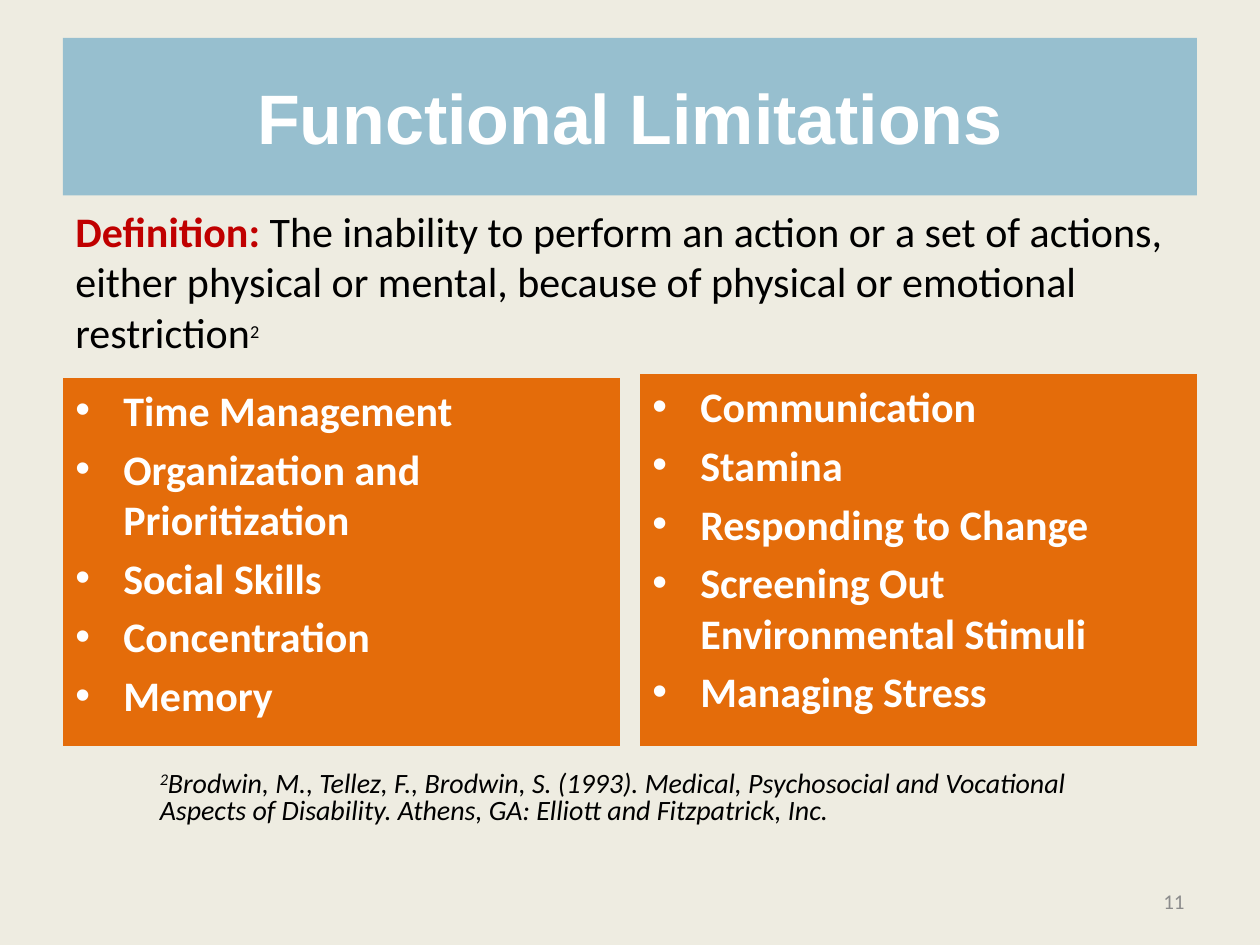
from lxml import etree
from pptx import Presentation
from pptx.dml.color import RGBColor
from pptx.enum.shapes import MSO_SHAPE
from pptx.enum.text import MSO_ANCHOR, PP_ALIGN
from pptx.oxml.ns import qn
from pptx.util import Inches, Pt

RECTANGLE = MSO_SHAPE.RECTANGLE
TOP, MIDDLE = MSO_ANCHOR.TOP, MSO_ANCHOR.MIDDLE
LEFT, CENTER, RIGHT = PP_ALIGN.LEFT, PP_ALIGN.CENTER, PP_ALIGN.RIGHT

COLORS = {
    "background": "EEECE1",
    "banner": "97BFCF",
    "panel": "E46C0A",
    "term": "C00000",
    "body": "000000",
    "light": "FFFFFF",
    "number": "8C8C8C",
}

MARGIN = 0.5
PANEL_WIDTH = 4.42
PANEL_BOTTOM = 5.92
BULLET_INDENT = 0.38
ITEM_SPACING = Pt(4.8)

LIMITATIONS = [
    (MARGIN, 3, ["Time Management", "Organization and Prioritization",
                 "Social Skills", "Concentration", "Memory"]),
    (10 - MARGIN - PANEL_WIDTH, 2.97,
     ["Communication", "Stamina", "Responding to Change",
      "Screening Out Environmental Stimuli", "Managing Stress"]),
]


def rgb(name):
    return RGBColor.from_string(COLORS[name])


def add_run(paragraph, text, color, superscript=False, **font_format):
    run = paragraph.add_run()
    run.text = text
    for attribute, value in {"name": "Calibri", **font_format}.items():
        setattr(run.font, attribute, value)
    run.font.color.rgb = rgb(color)
    if superscript:
        run.font._element.set("baseline", "30000")


def prepare_frame(shape, anchor):
    frame = shape.text_frame
    frame.word_wrap = True
    frame.vertical_anchor = anchor
    return frame


def add_block(slide, left, top, width, height, fill, anchor=TOP):
    """Add a filled rectangle and return its text frame."""
    block = slide.shapes.add_shape(
        RECTANGLE, Inches(left), Inches(top), Inches(width), Inches(height))
    block.shadow.inherit = False
    block.fill.solid()
    block.fill.fore_color.rgb = rgb(fill)
    block.line.fill.background()
    return prepare_frame(block, anchor)


def add_text(slide, left, top, width, height, anchor=TOP):
    """Add a text box and return its text frame."""
    box = slide.shapes.add_textbox(
        Inches(left), Inches(top), Inches(width), Inches(height))
    return prepare_frame(box, anchor)


def add_bullet(paragraph):
    properties = paragraph._p.get_or_add_pPr()
    properties.set("marL", str(Inches(BULLET_INDENT)))
    properties.set("indent", str(-Inches(BULLET_INDENT)))
    bullet_color = etree.SubElement(properties, qn("a:buClr"))
    etree.SubElement(bullet_color, qn("a:srgbClr"), val=COLORS["light"])
    etree.SubElement(properties, qn("a:buFont"), typeface="Arial")
    etree.SubElement(properties, qn("a:buChar"), char="•")


def add_limitations(slide, left, top, items):
    frame = add_block(slide, left, top, PANEL_WIDTH, PANEL_BOTTOM - top, "panel")
    for index, item in enumerate(items):
        paragraph = frame.add_paragraph() if index else frame.paragraphs[0]
        add_bullet(paragraph)
        paragraph.alignment = LEFT
        if index:
            paragraph.space_before = ITEM_SPACING
        add_run(paragraph, item, "light", size=Pt(24), bold=True)


def add_title(slide):
    title = add_block(slide, MARGIN, 0.3, 9, 1.25, "banner", MIDDLE).paragraphs[0]
    title.alignment = CENTER
    add_run(title, "Functional Limitations", "light",
            name="Arial", size=Pt(40), bold=True)


def add_definition(slide):
    definition = add_text(slide, MARGIN, 1.58, 9.25, 1.31).paragraphs[0]
    add_run(definition, "Definition: ", "term", size=Pt(24), bold=True)
    add_run(definition,
            "The inability to perform an action or a set of actions, either "
            "physical or mental, because of physical or emotional restriction",
            "body", size=Pt(24))
    add_run(definition, "2", "body", superscript=True, size=Pt(18))


def add_citation(slide):
    citation = add_text(slide, 1.17, 6.08, 8, 0.53).paragraphs[0]
    citation.line_spacing = 0.8
    add_run(citation, "2", "body", superscript=True, size=Pt(16), italic=True)
    add_run(citation,
            "Brodwin, M., Tellez, F., Brodwin, S. (1993). Medical, Psychosocial "
            "and Vocational Aspects of Disability. Athens, GA: Elliott and "
            "Fitzpatrick, Inc.",
            "body", size=Pt(16), italic=True)


def add_slide_number(slide):
    number = add_text(slide, 7.17, 6.95, 2.33, 0.4, MIDDLE).paragraphs[0]
    number.alignment = RIGHT
    add_run(number, "11", "number", size=Pt(12))


def main():
    presentation = Presentation()
    presentation.slide_width = Inches(10)
    presentation.slide_height = Inches(7.5)
    slide = presentation.slides.add_slide(presentation.slide_layouts[6])
    slide.background.fill.solid()
    slide.background.fill.fore_color.rgb = rgb("background")

    for left, top, items in LIMITATIONS:
        add_limitations(slide, left, top, items)
    add_slide_number(slide)
    add_title(slide)
    add_definition(slide)
    add_citation(slide)
    presentation.save("out.pptx")


if __name__ == "__main__":
    main()
